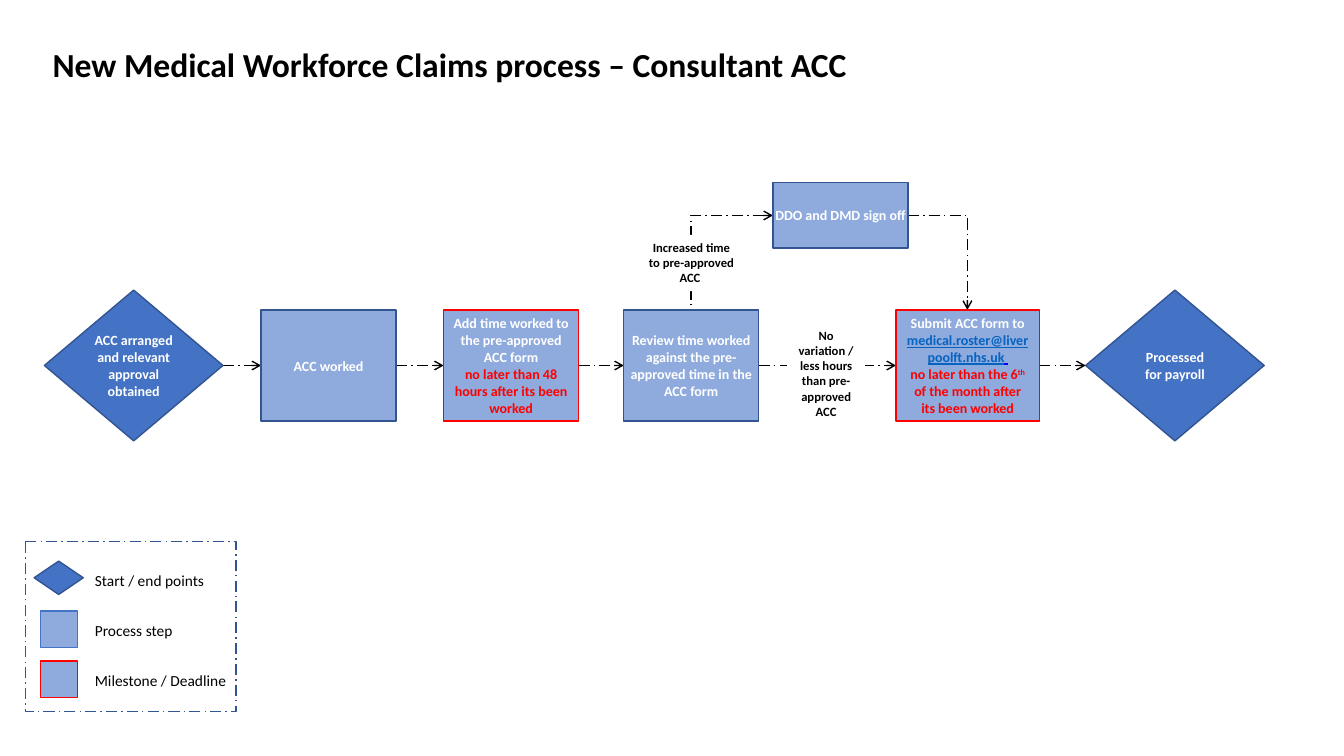
"""Build the flow chart slide for the consultant ACC claims process."""
from lxml import etree
from pptx import Presentation
from pptx.dml.color import RGBColor
from pptx.enum.dml import MSO_LINE
from pptx.enum.shapes import MSO_CONNECTOR, MSO_SHAPE
from pptx.enum.text import MSO_ANCHOR, MSO_AUTO_SIZE, PP_ALIGN
from pptx.oxml.ns import qn
from pptx.util import Cm, Pt

STEP = MSO_SHAPE.FLOWCHART_PROCESS
POINT = MSO_SHAPE.FLOWCHART_DECISION
DIAMOND = MSO_SHAPE.DIAMOND
RECT = MSO_SHAPE.RECTANGLE
DASH = MSO_LINE.LONG_DASH_DOT
LEFT, MID = PP_ALIGN.LEFT, PP_ALIGN.CENTER
TOP, CENTRE = MSO_ANCHOR.TOP, MSO_ANCHOR.MIDDLE

THEME = {
    "black": RGBColor(0, 0, 0),
    "white": RGBColor(255, 255, 255),
    "blue": RGBColor(0x44, 0x72, 0xC4),
    "pale": RGBColor(0x8F, 0xAA, 0xDC),
    "navy": RGBColor(0x32, 0x54, 0x91),
    "red": RGBColor(255, 0, 0),
    "link": RGBColor(0x05, 0x63, 0xC1),
    "space": RGBColor(0, 0, 255),
    "title": {"name": "Calibri", "size": Pt(24), "bold": True},
    "step": {"name": "Calibri", "size": Pt(10), "bold": True},
    "note": {"name": "Calibri", "size": Pt(9), "bold": True},
    "key": {"name": "Calibri", "size": Pt(11), "bold": False},
}


def block(kind, box, fill, edge, paras=(), style="step", ink="white",
          inset=0.1, align=MID, anchor=CENTRE):
    """Add a shape; each paragraph is a list of (text, colour, format) runs."""
    shape = slide.shapes.add_shape(kind, *map(Cm, box))
    shape.shadow.inherit = False
    if fill:
        shape.fill.solid()
        shape.fill.fore_color.rgb = THEME[fill]
    else:
        shape.fill.background()
    if edge:
        shape.line.color.rgb = THEME[edge]
        shape.line.width = Pt(1)
    else:
        shape.line.fill.background()
    frame = shape.text_frame
    layout = {"word_wrap": True, "vertical_anchor": anchor,
              "margin_left": Cm(inset), "margin_right": Cm(inset),
              "margin_top": Cm(0.13), "margin_bottom": Cm(0.13)}
    for name, value in layout.items():
        setattr(frame, name, value)
    for i, runs in enumerate(paras):
        para = frame.add_paragraph() if i else frame.paragraphs[0]
        para.alignment = align
        for text, tint, extra in runs:
            run = para.add_run()
            run.text = text
            for name, value in (THEME[style] | extra).items():
                setattr(run.font, name, value)
            run.font.color.rgb = THEME[tint or ink]
    return shape


def arrow(start, end, kind=MSO_CONNECTOR.STRAIGHT, tip="tailEnd"):
    """Add a dashed arrow between two points."""
    link = slide.shapes.add_connector(kind, *map(Cm, start + end))
    link.line.color.rgb = THEME["black"]
    link.line.width = Pt(1)
    link.line.dash_style = DASH
    etree.SubElement(link.line._get_or_add_ln(), qn("a:" + tip), type="arrow")
    props = link._element.spPr
    etree.SubElement(props, qn("a:effectLst"))
    if kind == MSO_CONNECTOR.ELBOW:
        props.find(qn("a:prstGeom")).set("prst", "bentConnector2")


deck = Presentation()
deck.slide_width, deck.slide_height = Cm(33.87), Cm(19.05)
slide = deck.slides.add_slide(deck.slide_layouts[5])

title = slide.shapes.title
spot = {"left": Cm(1.07), "top": Cm(0.99), "width": Cm(27.33), "height": Cm(2.26)}
for name, value in spot.items():
    setattr(title, name, value)
frame = title.text_frame
frame.text = "New Medical Workforce Claims process – Consultant ACC"
for name, value in {"vertical_anchor": TOP, "word_wrap": True,
                    "auto_size": MSO_AUTO_SIZE.NONE}.items():
    setattr(frame, name, value)
head = frame.paragraphs[0]
head.alignment = LEFT
for name, value in THEME["title"].items():
    setattr(head.runs[0].font, name, value)
head.runs[0].font.color.rgb = THEME["black"]

axis = 9.21
steps = [
    (POINT, 1.12, 4.5, 3.8, "blue", "navy", 0.1,
     [[("ACC arranged and relevant approval obtained", None, {})]]),
    (STEP, 6.58, 3.4, 2.8, "pale", "navy", 0, [[("ACC worked", None, {})]]),
    (STEP, 11.18, 3.4, 2.8, "pale", "red", 0.1,
     [[("Add time worked to the pre-approved ACC form", None, {})],
      [("no later than 48 hours after its been worked", "red", {})]]),
    (STEP, 15.72, 3.4, 2.8, "pale", "navy", 0,
     [[("Review time worked against the pre- approved time in the ACC form",
        None, {})]]),
    (STEP, 22.58, 3.61, 2.8, "pale", "red", 0.25,
     [[("Submit ACC form to ", None, {}),
       ("medical.roster@liverpoolft.nhs.uk", "link", {"underline": True}),
       (" ", "space", {"underline": True})],
      [("no later than the 6", "red", {}), ("th", "red", {}),
       (" of the month after its been worked", "red", {})]]),
    (DIAMOND, 27.36, 4.5, 3.8, "blue", "navy", 0.25,
     [[("Processed for payroll", None, {})]]),
]
for last, then in zip(steps, steps[1:]):
    arrow((last[1] + last[2], axis), (then[1], axis))
arrow((19.48, 5.43), (17.42, 7.81), MSO_CONNECTOR.ELBOW, "headEnd")
arrow((22.88, 5.43), (24.38, 7.81), MSO_CONNECTOR.ELBOW)

for kind, left, width, height, fill, edge, inset, paras in steps:
    shape = block(kind, (left, axis - height / 2, width, height),
                  fill, edge, paras, inset=inset)
    for para in shape.text_frame.paragraphs:
        for run in para.runs:
            if run.text == "th":
                run.font._element.set("baseline", "30000")
block(STEP, (19.48, 4.6, 3.4, 1.65), "pale", "navy",
      [[("DDO and DMD sign off", None, {})]], inset=0)

notes = [
    ((16.18, 5.92, 2.49, 1.42), "Increased time to pre-approved ACC "),
    ((19.84, 8.13, 1.96, 2.18),
     "No variation / less hours than pre-approved ACC"),
]
for box, text in notes:
    block(RECT, box, "white", None, [[(text, None, {})]], "note", "black",
          anchor=TOP)

border = block(STEP, (0.64, 13.64, 5.31, 4.29), None, "navy")
border.line.dash_style = DASH
keys = [
    (POINT, 0.86, 1.24, 0.84, "blue", "navy", "Start / end points"),
    (STEP, 1.02, 0.94, 0.91, "pale", "blue", "Process step"),
    (STEP, 1.02, 0.94, 0.91, "pale", "red", "Milestone / Deadline"),
]
for i, (kind, left, width, height, fill, edge, text) in enumerate(keys):
    top = 14.25 + 1.26 * i
    block(kind, (left, top - 0.11, width, height), fill, edge)
    block(RECT, (2.29, top, 3.61, 0.74), "white", None, [[(text, None, {})]],
          "key", "black", align=LEFT, anchor=TOP)

deck.save("out.pptx")
